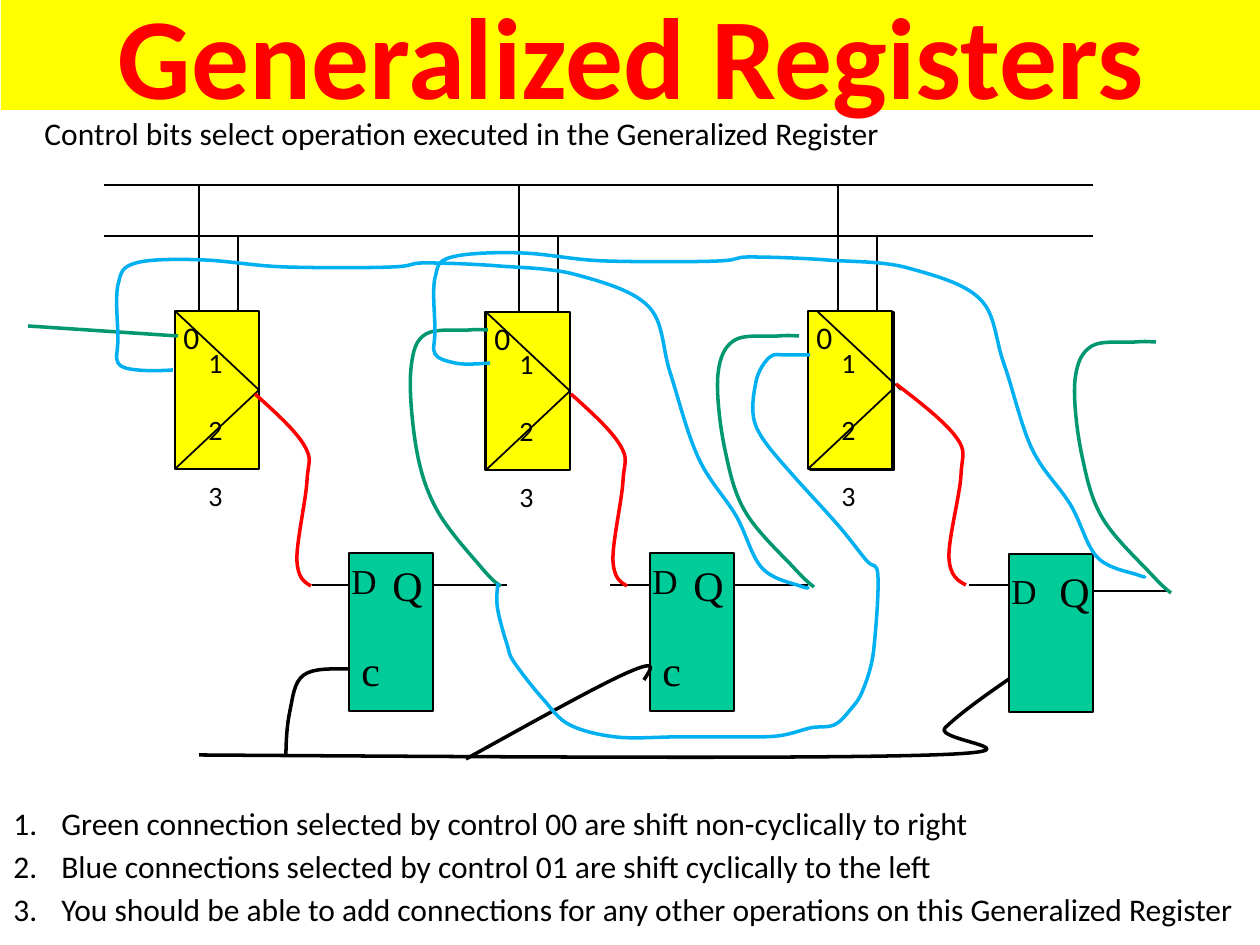
"""Build the Generalized Registers slide: multiplexers, flip-flops and their wiring."""
import dataclasses

import lxml.etree
import pptx
import pptx.dml.color
import pptx.enum.shapes
import pptx.enum.text
import pptx.oxml.ns
import pptx.util

EMU_PER_PX = 914400 / 126
BLACK, RED, GREEN, BLUE = "000000", "FF0000", "009771", "00B0F0"
YELLOW, TEAL = "FFFF00", "00CC99"
BOX_WIDTH, BOX_HEIGHT = 84, 158
Point = tuple[int, int]


@dataclasses.dataclass
class Caption:
    lines: list[str]
    left: int
    top: int
    width: int
    height: int
    size: int
    font: str = "Calibri"
    format: dict = dataclasses.field(default_factory=lambda: {"space_before": pptx.util.Pt(3)})
    numbered: bool = False


@dataclasses.dataclass
class Register:
    left: int
    top: int
    d_offset: Point = (-10, 0)
    q_offset: Point = (31, 0)
    clock_label: bool = True


@dataclasses.dataclass
class Multiplexer:
    left: int
    top: int
    labelled: bool = True
    upper_shift: int = 0


@dataclasses.dataclass
class Wire:
    color: str
    points: list[Point]

    def shifted(self, right: int, down: int) -> "Wire":
        """Return the same wire moved by an offset."""
        return Wire(self.color, [(x + right, y + down) for x, y in self.points])


REGISTERS = [Register(349, 553), Register(650, 553),
             Register(1009, 554, (-10, 9), (38, 5), False)]
MULTIPLEXERS = [Multiplexer(175, 311), Multiplexer(485, 312, False), Multiplexer(810, 312, False),
                Multiplexer(486, 312), Multiplexer(808, 311, True, 9)]
REGISTER_LEADS = [((433, 585), (507, 585)), ((735, 585), (808, 585)), ((1094, 591), (1167, 591)),
                  ((312, 585), (349, 585)), ((610, 585), (650, 585)), ((969, 585), (1009, 585))]
BUS_TOPS = (185, 236)
TAP_LEFTS = (199, 519, 838)
TAP_GAP, TAP_BOTTOM = 39, 312

CLOCK_WIRES = [
    Wire(BLACK, [(199, 755), (931, 755), (945, 728), (1009, 679)]),
    Wire(BLACK, [(466, 759), (629, 672), (644, 680)]),
    Wire(BLACK, [(286, 757), (290, 711), (304, 675), (349, 669)]),
]
DATA_WIRE = Wire(RED, [(255, 394), (304, 445), (307, 481), (297, 561), (311, 586)])
SHIFT_WIRE = Wire(GREEN, [(814, 587), (794, 568), (746, 513), (725, 450), (718, 374),
                          (735, 340), (779, 336), (799, 336)])
SIGNAL_WIRES = [
    DATA_WIRE,
    DATA_WIRE.shifted(316, 0),
    Wire(RED, [(896, 384), (956, 437), (961, 475), (949, 558), (966, 585)]),
    Wire(GREEN, [(501, 586), (481, 567), (437, 510), (416, 446), (411, 369),
                 (426, 334), (469, 330), (488, 330)]),
    SHIFT_WIRE,
    SHIFT_WIRE.shifted(357, 6),
    Wire(BLUE, [(809, 587), (800, 586), (762, 568), (735, 514), (698, 457), (670, 372),
                (648, 306), (577, 275), (498, 266), (425, 263), (393, 267), (285, 267),
                (204, 260), (136, 263), (118, 285), (118, 338), (118, 363), (137, 370),
                (173, 370)]),
    Wire(BLUE, [(1145, 576), (1138, 575), (1097, 557), (1070, 504), (1032, 449), (1004, 364),
                (980, 299), (908, 268), (827, 260), (750, 257), (718, 261), (606, 261),
                (523, 253), (452, 257), (435, 278), (435, 330), (435, 354), (455, 363),
                (490, 363)]),
    Wire(BLUE, [(498, 583), (498, 611), (507, 644), (514, 662), (543, 699), (570, 725),
                (616, 737), (673, 737), (699, 737), (748, 737), (784, 735), (810, 728),
                (834, 725), (851, 709), (863, 690), (874, 648), (878, 576), (867, 561),
                (838, 525), (791, 473), (756, 426), (756, 382), (770, 357), (785, 355),
                (810, 355)]),
]


def px(length: int) -> int:
    """Turn pixels into EMU."""
    return round(length * EMU_PER_PX)


def color(value: str) -> pptx.dml.color.RGBColor:
    """Turn a hex string into a colour."""
    return pptx.dml.color.RGBColor.from_string(value)


def set_values(target, values: dict) -> None:
    """Set each attribute named in a dict."""
    for name, value in values.items():
        setattr(target, name, value)


def set_line(line, line_color: str, width: int) -> None:
    """Give an outline its colour and width."""
    line.color.rgb = color(line_color)
    line.width = pptx.util.Pt(width)


def add_box(slide, left: int, top: int, width: int, height: int, fill: str):
    """Draw a filled rectangle."""
    shape = slide.shapes.add_shape(pptx.enum.shapes.MSO_SHAPE.RECTANGLE,
                                   px(left), px(top), px(width), px(height))
    shape.shadow.inherit = False
    shape.fill.solid()
    shape.fill.fore_color.rgb = color(fill)
    set_line(shape.line, BLACK, 1)
    return shape


def add_line(slide, start: Point, end: Point, line_color: str = BLACK, width: int = 1):
    """Draw a straight connector."""
    connector = slide.shapes.add_connector(pptx.enum.shapes.MSO_CONNECTOR.STRAIGHT,
                                           *map(px, start + end))
    set_line(connector.line, line_color, width)
    lxml.etree.SubElement(connector._element.spPr, pptx.oxml.ns.qn("a:effectLst"))
    return connector


def add_wire(slide, wire: Wire) -> None:
    """Draw a smooth curve through the wire's points."""
    points = wire.points
    builder = slide.shapes.build_freeform(*points[0], scale=EMU_PER_PX)
    builder.add_line_segments(points[1:], close=False)
    shape = builder.convert_to_shape()
    shape.shadow.inherit = False
    shape.fill.background()
    set_line(shape.line, wire.color, 2)
    left, top = (min(axis) for axis in zip(*points))
    slopes = [tuple((b - a) / 6 for a, b in zip(before, after))
              for before, after in zip(points, points[2:])]
    segments = list(shape._element.iter(pptx.oxml.ns.qn("a:lnTo")))
    for index, segment in enumerate(segments):
        start, end = points[index], points[index + 1]
        first = last = None
        if index > 0:
            first = tuple(p + s for p, s in zip(start, slopes[index - 1]))
        if index < len(slopes):
            last = tuple(p - s for p, s in zip(end, slopes[index]))
        first = first or tuple((a + b) / 2 for a, b in zip(start, last))
        last = last or tuple((a + b) / 2 for a, b in zip(first, end))
        curve = lxml.etree.Element(pptx.oxml.ns.qn("a:cubicBezTo"))
        for x, y in (first, last, end):
            lxml.etree.SubElement(curve, pptx.oxml.ns.qn("a:pt"),
                                  x=str(round(x - left)), y=str(round(y - top)))
        segment.getparent().replace(segment, curve)


def add_caption(slide, caption: Caption) -> None:
    """Draw a text box with one paragraph per line."""
    shape = slide.shapes.add_textbox(px(caption.left), px(caption.top),
                                     px(caption.width), px(caption.height))
    frame = shape.text_frame
    frame.word_wrap = len(caption.lines[0]) > 1
    frame.text = "\n".join(caption.lines)
    for paragraph in frame.paragraphs:
        set_values(paragraph, caption.format)
        set_values(paragraph.font, {"size": pptx.util.Pt(caption.size), "name": caption.font})
        paragraph.font.color.rgb = color(BLACK)
        if caption.numbered:
            properties = paragraph._p.get_or_add_pPr()
            properties.set("marL", str(px(48)))
            properties.set("indent", str(px(-48)))
            number = lxml.etree.Element(pptx.oxml.ns.qn("a:buAutoNum"), type="arabicPeriod")
            properties.find(pptx.oxml.ns.qn("a:defRPr")).addprevious(number)


def add_register(slide, register: Register) -> None:
    """Draw a flip-flop with its pin letters."""
    add_box(slide, register.left, register.top, BOX_WIDTH, BOX_HEIGHT, TEAL)
    pins = [("D", register.d_offset, 42, 54, 20), ("Q", register.q_offset, 63, 63, 24)]
    if register.clock_label:
        pins.append(("c", (0, 85), 63, 63, 24))
    for letter, (right, down), width, height, size in pins:
        add_caption(slide, Caption([letter], register.left + right, register.top + down,
                                   width, height, size, "Times New Roman"))


def add_multiplexer(slide, multiplexer: Multiplexer) -> None:
    """Draw a multiplexer with its diagonals and input numbers."""
    left, top, shift = multiplexer.left, multiplexer.top, multiplexer.upper_shift
    box = add_box(slide, left, top, BOX_WIDTH, BOX_HEIGHT, YELLOW)
    output = (left + BOX_WIDTH, top + BOX_HEIGHT // 2)
    upper = add_line(slide, (left + shift, top), (output[0] + shift, output[1]))
    lower = add_line(slide, (left, top + BOX_HEIGHT), output)
    for diagonal in [lower] if shift else [upper, lower]:
        diagonal.end_connect(box, 3)
    if multiplexer.labelled:
        add_caption(slide, Caption(["0"], left - 4, top + 1, 32, 50, 18))
        add_caption(slide, Caption(["1", "2", "3"], left + 21, top + 28, 32, 181, 16, format={
            "alignment": pptx.enum.text.PP_ALIGN.CENTER, "space_after": pptx.util.Pt(19)}))


def add_title(slide) -> None:
    """Draw the title band."""
    band = add_box(slide, 1, -3, 1260, 113, YELLOW)
    band.line.fill.background()
    band.text_frame.text = "Generalized Registers"
    band.text_frame.vertical_anchor = pptx.enum.text.MSO_ANCHOR.MIDDLE
    paragraph = band.text_frame.paragraphs[0]
    paragraph.alignment = pptx.enum.text.PP_ALIGN.CENTER
    set_values(paragraph.font, {"size": pptx.util.Pt(66), "name": "Calibri", "bold": True})
    paragraph.font.color.rgb = color(RED)


def main() -> None:
    """Build and save the slide."""
    presentation = pptx.Presentation()
    set_values(presentation, {"slide_width": px(1260), "slide_height": px(945)})
    slide = presentation.slides.add_slide(presentation.slide_layouts[6])
    for register in REGISTERS:
        add_register(slide, register)
    for start, end in REGISTER_LEADS:
        add_line(slide, start, end)
    for wire in CLOCK_WIRES:
        add_wire(slide, wire)
    add_title(slide)
    for multiplexer in MULTIPLEXERS:
        add_multiplexer(slide, multiplexer)
    for index, bus_top in enumerate(BUS_TOPS):
        add_line(slide, (104, bus_top), (1093, bus_top))
        for tap_left in TAP_LEFTS:
            left = tap_left + index * TAP_GAP
            add_line(slide, (left, bus_top), (left, TAP_BOTTOM))
    add_line(slide, (28, 326), (178, 336), GREEN, 2)
    for wire in SIGNAL_WIRES:
        add_wire(slide, wire)
    add_caption(slide, Caption(
        ["Control bits select operation executed in the Generalized Register"],
        32, 108, 966, 50, 18))
    add_caption(slide, Caption([
        "Green connection selected by control 00 are shift non-cyclically to right",
        "Blue connections selected by control 01 are shift cyclically to the left",
        "You should be able to add connections for any other operations on this Generalized Register",
    ], 1, 798, 1259, 142, 18, numbered=True))
    presentation.save("out.pptx")


if __name__ == "__main__":
    main()
